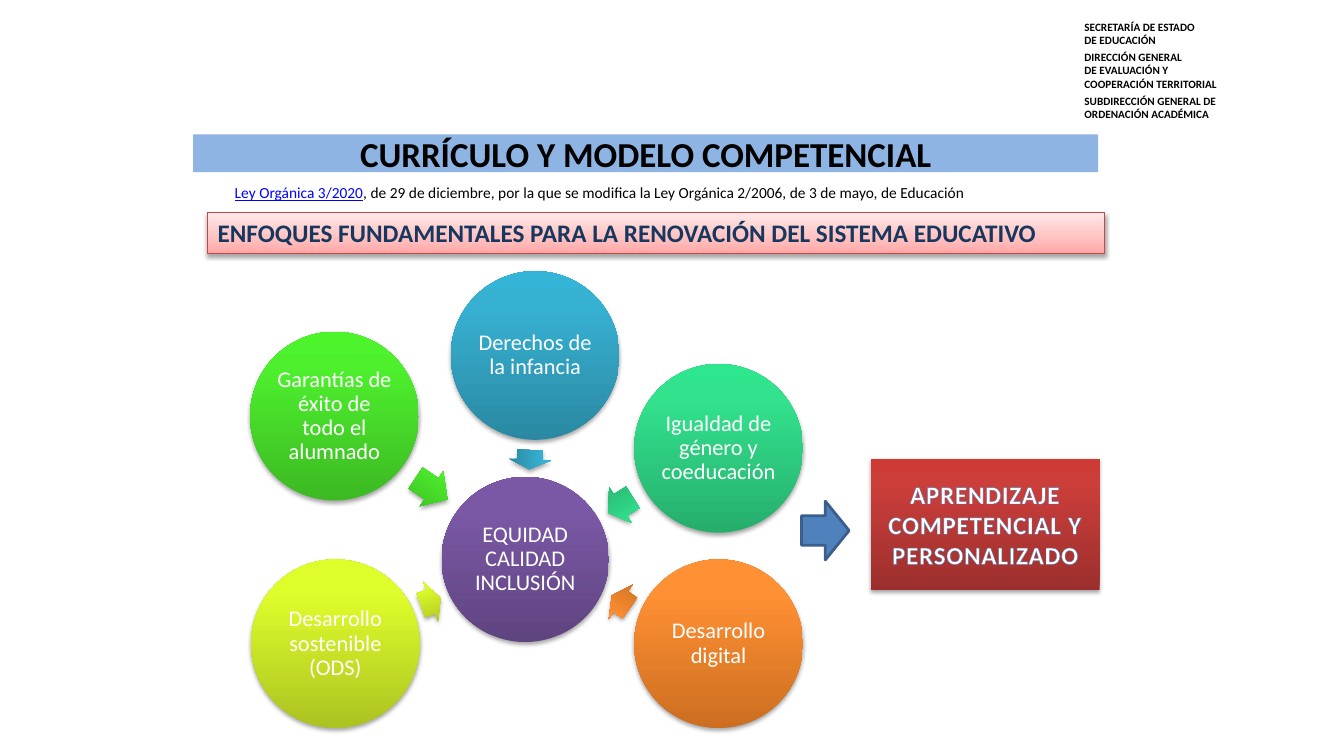
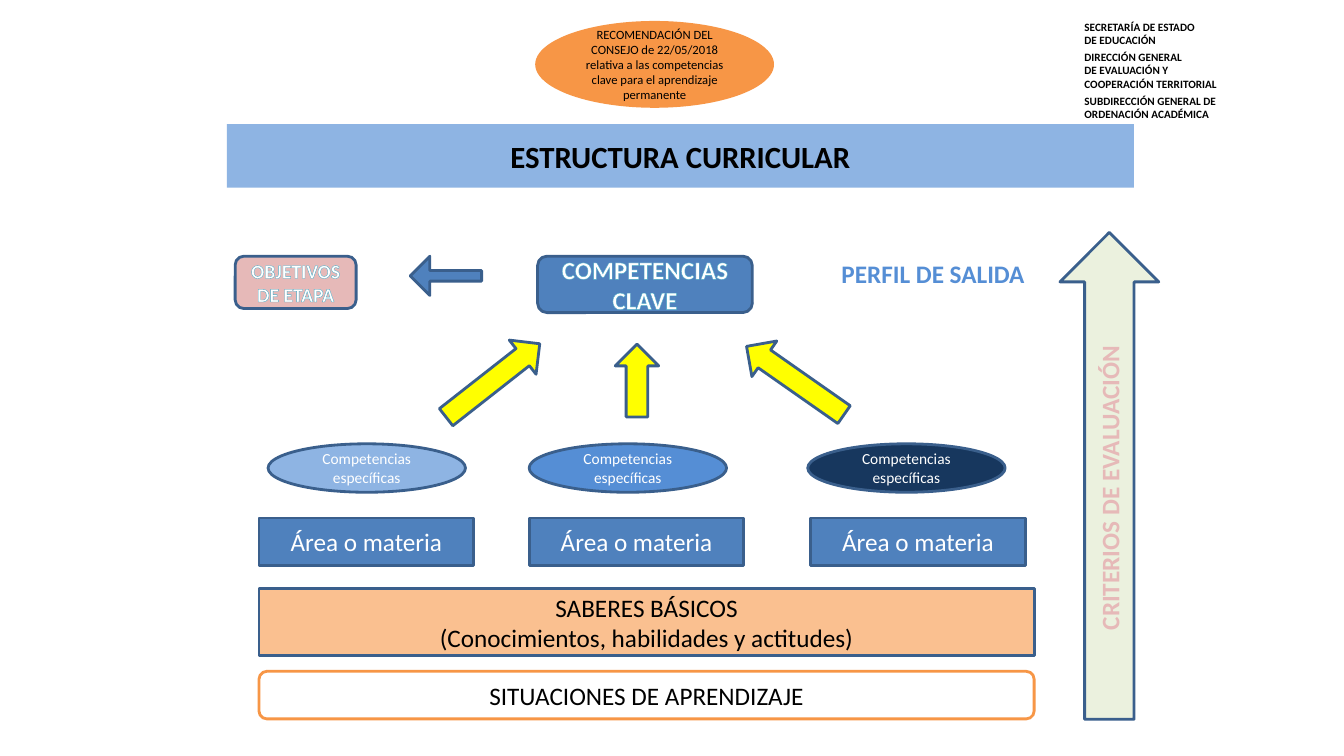
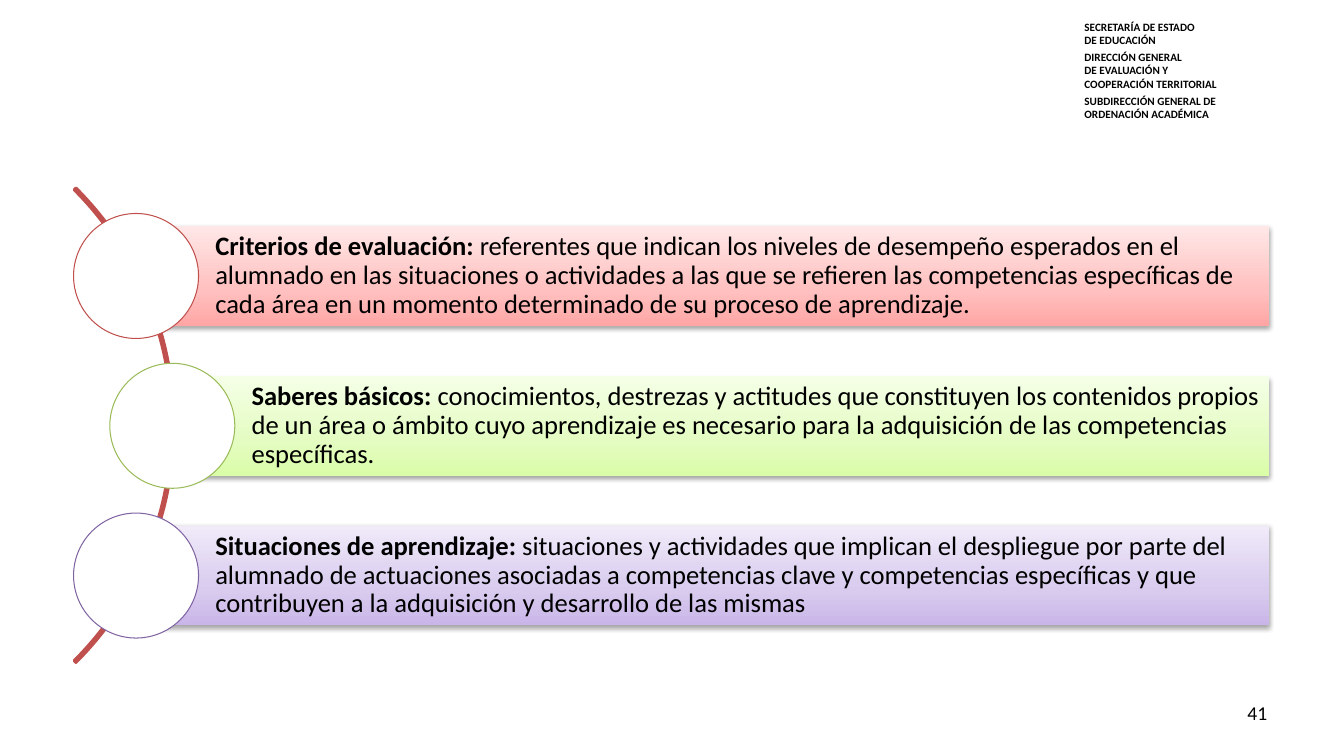
from dataclasses import dataclass
from typing import Optional

from lxml import etree
from pptx import Presentation
from pptx.dml.color import RGBColor
from pptx.enum.dml import MSO_FILL
from pptx.enum.shapes import MSO_SHAPE
from pptx.enum.text import MSO_ANCHOR, MSO_AUTO_SIZE, PP_ALIGN
from pptx.oxml.ns import qn
from pptx.util import Pt

RECT, ROUND = MSO_SHAPE.RECTANGLE, MSO_SHAPE.ROUNDED_RECTANGLE
OVAL, ARROW = MSO_SHAPE.OVAL, MSO_SHAPE.RIGHT_ARROW
BLOCK_ARC = MSO_SHAPE.BLOCK_ARC
LEFT, CENTER = PP_ALIGN.LEFT, PP_ALIGN.CENTER
RIGHT, JUSTIFY = PP_ALIGN.RIGHT, PP_ALIGN.JUSTIFY
TOP, MIDDLE = MSO_ANCHOR.TOP, MSO_ANCHOR.MIDDLE
NO_FIT = MSO_AUTO_SIZE.NONE
GRADIENT = MSO_FILL.GRADIENT

# Colours
FONT = "Calibri"
BLACK = RGBColor(0x00, 0x00, 0x00)
WHITE = RGBColor(0xFF, 0xFF, 0xFF)
LINK = RGBColor(0x00, 0x00, 0xFF)
BAND = RGBColor(0x8E, 0xB4, 0xE3)
BLUE = RGBColor(0x4F, 0x81, 0xBD)
EDGE = RGBColor(0x3A, 0x5F, 0x8C)
MID_BLUE = RGBColor(0x55, 0x8E, 0xD5)
NAVY = RGBColor(0x17, 0x37, 0x5E)
TEAL = RGBColor(0x4B, 0xAC, 0xC6)
PINK = RGBColor(0xE6, 0xB9, 0xB8)
RED = RGBColor(0xC0, 0x50, 0x4D)
DARK_RED = RGBColor(0xBF, 0x4C, 0x48)
GREEN = RGBColor(0x9B, 0xBB, 0x59)
PURPLE = RGBColor(0x80, 0x64, 0xA2)
YELLOW = RGBColor(0xFF, 0xFF, 0x00)
ORANGE = RGBColor(0xF7, 0x96, 0x46)
PEACH = RGBColor(0xFA, 0xC0, 0x90)
PALE_GREEN = RGBColor(0xEB, 0xF1, 0xDE)


@dataclass(frozen=True)
class Gradient:
    """Vertical gradient, listed from the bottom up."""
    bottom: RGBColor
    middle: RGBColor
    top: RGBColor
    stop: int = 80  # place of the middle colour, percent


def strong(bottom: str, middle: str, top: str) -> Gradient:
    return Gradient(*map(RGBColor.from_string, (bottom, middle, top)))


def soft(bottom: str, middle: str, top: str) -> Gradient:
    return Gradient(*map(RGBColor.from_string, (bottom, middle, top)), stop=35)


VIOLET_BALL = strong("5F4480", "7B58A6", "7C57A8")
CYAN_BALL = strong("2A88A2", "37B1D2", "34B4D6")
EMERALD_BALL = strong("26AE6D", "32E28D", "2EE68E")
GREEN_BALL = strong("3CB923", "4EF02E", "4CF52A")
LIME_BALL = strong("ACC321", "DFFD2B", "E1FF2B")
ORANGE_BALL = strong("CC6E20", "FF9034", "FF9136")
RED_BLOCK = strong("9C2F2D", "CB3E3A", "CE3B37")
ROSE_BAR = soft("FFA6A5", "FFC0BF", "FFE7E7")
LIME_BAR = soft("DAFDA7", "E4FCC2", "F5FFE7")
LILAC_BAR = soft("C9B5E8", "D8CBEE", "F0EAF9")


@dataclass(frozen=True)
class Box:
    x: float
    y: float
    w: float
    h: float
    rot: float = 0


@dataclass(frozen=True)
class Style:
    size: float
    color: RGBColor = BLACK
    bold: bool = False
    align: PP_ALIGN = CENTER
    anchor: MSO_ANCHOR = MIDDLE
    margins: tuple = (7.2, 3.6, 7.2, 3.6)
    leading: Optional[float] = None
    outline: Optional[RGBColor] = None
    outline_width: float = 0.8
    tracking: int = 0  # hundredths of a point


@dataclass(frozen=True)
class Ball:
    text: str
    x: float
    y: float
    fill: Gradient
    arrow: Box


@dataclass(frozen=True)
class Column:
    oval_x: float
    area_x: float
    fill: RGBColor
    arrow: Box


@dataclass(frozen=True)
class Definition:
    x: float
    term: str
    text: str
    fill: Gradient
    ring: RGBColor


def place(s, box: Box) -> None:
    s.left, s.top, s.width, s.height = map(Pt, (box.x, box.y, box.w, box.h))
    s.rotation = box.rot


def write(s, paragraphs: list, style: Style):
    """Fill a shape; each paragraph is a list of run texts."""
    tf = s.text_frame
    tf.word_wrap, tf.auto_size = True, NO_FIT
    tf.vertical_anchor = style.anchor
    (tf.margin_left, tf.margin_top,
     tf.margin_right, tf.margin_bottom) = map(Pt, style.margins)
    for i, texts in enumerate(paragraphs):
        p = tf.paragraphs[0] if i == 0 else tf.add_paragraph()
        p.alignment = style.align
        if style.leading:
            p.line_spacing = style.leading
        p.font.name, p.font.size = FONT, Pt(style.size)
        p.font.bold, p.font.color.rgb = style.bold, style.color
        for text in texts:
            p.add_run().text = text
    if style.outline is not None:
        for r in s.element.iter(qn("a:r")):
            rPr = r.get_or_add_rPr()
            rPr.set("spc", str(style.tracking))
            ln = etree.Element(qn("a:ln"), w=str(Pt(style.outline_width)))
            fill = etree.SubElement(ln, qn("a:solidFill"))
            etree.SubElement(fill, qn("a:srgbClr"), val=str(style.outline))
            rPr.insert(0, ln)
    return tf


def paint_gradient(s, gradient: Gradient) -> None:
    s.fill.gradient()
    s.fill.gradient_angle = 90
    stops = next(s.element.iter(qn("a:gsLst")))
    for old in list(stops):
        stops.remove(old)
    for pos, color in ((0, gradient.bottom), (gradient.stop, gradient.middle),
                       (100, gradient.top)):
        gs = etree.SubElement(stops, qn("a:gs"), pos=str(pos * 1000))
        etree.SubElement(gs, qn("a:srgbClr"), val=str(color))


def drop_shadow(s) -> None:
    effects = next(s.element.iter(qn("a:effectLst")))
    shadow = etree.SubElement(effects, qn("a:outerShdw"), blurRad=str(Pt(3.1)),
                              dist=str(Pt(1.8)), dir="5400000", rotWithShape="0")
    color = etree.SubElement(shadow, qn("a:srgbClr"), val=str(BLACK))
    etree.SubElement(color, qn("a:alpha"), val="35000")


def add_shape(slide, kind, box: Box, fill=None, line: Optional[RGBColor] = None,
              width: float = 2):
    """Draw a preset shape; gradient shapes carry a soft shadow."""
    s = slide.shapes.add_shape(kind, 0, 0, 0, 0)
    place(s, box)
    s.shadow.inherit = False
    if isinstance(fill, Gradient):
        paint_gradient(s, fill)
        drop_shadow(s)
    elif fill is None:
        s.fill.background()
    else:
        s.fill.solid()
        s.fill.fore_color.rgb = fill
    if line is None:
        s.line.fill.background()
    else:
        s.line.color.rgb, s.line.width = line, Pt(width)
    return s


def add_text(slide, box: Box, paragraphs: list, style: Style):
    s = slide.shapes.add_textbox(0, 0, 0, 0)
    place(s, box)
    write(s, paragraphs, style)
    return s


def add_title(slide, text: str, box: Box, size: float) -> None:
    s = slide.shapes.title
    place(s, box)
    s.fill.solid()
    s.fill.fore_color.rgb = BAND
    write(s, [[text]], Style(size, bold=True))


def add_master_header(prs, slide) -> None:
    """Put the department names on the master, for every slide."""
    lines = ["SECRETARÍA DE ESTADO", "DE EDUCACIÓN", "DIRECCIÓN GENERAL",
             "DE EVALUACIÓN Y", "COOPERACIÓN TERRITORIAL",
             "SUBDIRECCIÓN GENERAL DE ORDENACIÓN ACADÉMICA"]
    s = add_text(slide, Box(767.5, 10.8, 147, 80), [[line] for line in lines],
                 Style(8, bold=True, align=LEFT, anchor=TOP))
    for i in (2, 5):
        s.text_frame.paragraphs[i].space_before = Pt(2.4)
    prs.slide_master.shapes.element.append(s.element)


def build_approaches(slide) -> None:
    add_title(slide, "CURRÍCULO Y MODELO COMPETENCIAL",
              Box(138, 96, 646.5, 27), 25)
    law = add_text(
        slide, Box(154, 127.5, 628, 26.5),
        [["Ley Orgánica 3/2020", ", de 29 de diciembre, por la que se modifica "
          "la Ley Orgánica 2/2006, de 3 de mayo, de Educación"]],
        Style(11, align=JUSTIFY, anchor=TOP, margins=(13.7, 3.6, 7.2, 3.6)))
    name = law.text_frame.paragraphs[0].runs[0].font
    name.color.rgb, name.underline = LINK, True

    # Central idea and the balls that point to it
    ball_style = Style(16, WHITE, leading=0.9, margins=(1.5,) * 4)
    core = add_shape(slide, OVAL, Box(315.4, 340.6, 119.5, 118), VIOLET_BALL)
    write(core, [["EQUIDAD CALIDAD INCLUSIÓN"]], ball_style)
    size, arrow_h = 120.5, 30.2
    balls = [
        Ball("Derechos de la infancia", 322, 193.7, CYAN_BALL,
             Box(371.5, 313.2, 13.7, arrow_h, 92.6)),
        Ball("Igualdad de género y coeducación", 453, 260, EMERALD_BALL,
             Box(432.7, 345.6, 20.9, arrow_h, 147.9)),
        Ball("Garantías de éxito de todo el alumnado", 178.6, 237, GREEN_BALL,
             Box(294.5, 334, 27.4, arrow_h, 33.9)),
        Ball("Desarrollo sostenible (ODS)", 179.3, 399.6, LIME_BALL,
             Box(300.2, 414.7, 15, arrow_h, 339.9)),
        Ball("Desarrollo digital", 453, 399.6, ORANGE_BALL,
             Box(435.6, 414.7, 15.8, arrow_h, 214.9)),
    ]
    for ball in balls:
        arrow = add_shape(slide, ARROW, ball.arrow, ball.fill)
        arrow.adjustments[0] = 0.6
        s = add_shape(slide, OVAL, Box(ball.x, ball.y, size, size), ball.fill)
        write(s, [[ball.text]], ball_style)

    # Heading bar and outcome
    add_shape(slide, ARROW, Box(572.5, 358, 34, 42), BLUE, EDGE)
    bar = add_shape(slide, RECT, Box(148.3, 152, 641, 29), ROSE_BAR, DARK_RED, 0.75)
    write(bar, [["ENFOQUES FUNDAMENTALES PARA LA RENOVACIÓN DEL SISTEMA EDUCATIVO"]],
          Style(18, NAVY, True, LEFT, TOP))
    outcome = add_shape(slide, RECT, Box(622, 327.6, 163.5, 93.6), RED_BLOCK)
    write(outcome, [["APRENDIZAJE COMPETENCIAL Y PERSONALIZADO"]],
          Style(18, WHITE, True, outline=BLUE, outline_width=0.75, tracking=50))


def build_structure(slide) -> None:
    add_title(slide, "ESTRUCTURA CURRICULAR", Box(162, 88.6, 648, 45.4), 22)
    source = add_shape(slide, OVAL, Box(382.3, 15, 170.6, 62), ORANGE)
    write(source, [["RECOMENDACIÓN DEL CONSEJO de 22/05/2018 relativa a las "
                    "competencias clave para el aprendizaje permanente"]],
          Style(9, margins=(5, 2.9, 5, 2.9)))

    # Goals, key competences and leaving profile
    goals = add_shape(slide, ROUND, Box(168, 183, 86.4, 37.4), PINK, EDGE)
    write(goals, [["OBJETIVOS DE ETAPA"]], Style(14, WHITE, True, outline=TEAL))
    key = add_shape(slide, ROUND, Box(384, 183, 153.4, 40.3), BLUE, EDGE)
    write(key, [["COMPETENCIAS CLAVE"]], Style(18, WHITE, True, outline=TEAL))
    to_goals = add_shape(slide, ARROW, Box(293, 183, 51, 28, 180), BLUE, EDGE)
    to_goals.adjustments[0] = 0.27
    add_text(slide, Box(594, 180.7, 147, 29), [["PERFIL DE SALIDA"]],
             Style(18, MID_BLUE, True, LEFT, TOP))

    # Specific competences over their subject areas
    columns = [
        Column(191.5, 185, BAND, Box(309.6, 256.3, 85, 31, 321.9)),
        Column(378, 378, MID_BLUE, Box(429, 256.3, 52, 31, 270)),
        Column(577, 579, NAVY, Box(525.6, 256.3, 85, 31, 215)),
    ]
    for col in columns:
        add_shape(slide, ARROW, col.arrow, YELLOW, EDGE)
        oval = add_shape(slide, OVAL, Box(col.oval_x, 317, 141, 34.6), col.fill, EDGE)
        write(oval, [["Competencias específicas"]], Style(11, WHITE))
        area = add_shape(slide, RECT, Box(col.area_x, 370, 153.4, 34), BLUE, EDGE)
        write(area, [["Área o materia"]], Style(18, WHITE))

    # Foundations and assessment
    basics = add_shape(slide, RECT, Box(185, 420.5, 553.7, 48), PEACH, EDGE)
    write(basics, [["SABERES BÁSICOS"], ["(Conocimientos, habilidades y actitudes)"]],
          Style(18))
    situations = add_shape(slide, ROUND, Box(185, 479.5, 553.7, 34), WHITE, ORANGE)
    write(situations, [["SITUACIONES DE APRENDIZAJE"]], Style(18))
    criteria = add_shape(slide, ARROW, Box(618.5, 304.6, 347.8, 70.6, 270),
                         PALE_GREEN, EDGE)
    write(criteria, [["CRITERIOS DE EVALUACIÓN"]],
          Style(18, PINK, True, outline=RED, outline_width=1.75))


def build_definitions(slide) -> None:
    arc = add_shape(slide, BLOCK_ARC, Box(-355, 64, 479.5, 479.5), line=RED)
    for i, value in enumerate((189, 27, 0.004)):
        arc.adjustments[i] = value

    right, top, pitch, bar_h, ring_d = 906.5, 161.5, 107, 71.3, 89.3
    outer, inner = 97.2, 123.1
    definitions = [
        Definition(outer, "Criterios de evaluación: ",
                   "referentes que indican los niveles de desempeño esperados en el "
                   "alumnado en las situaciones o actividades a las que se refieren "
                   "las competencias específicas de cada área en un momento "
                   "determinado de su proceso de aprendizaje.", ROSE_BAR, RED),
        Definition(inner, "Saberes básicos: ",
                   "conocimientos, destrezas y actitudes que constituyen los "
                   "contenidos propios de un área o ámbito cuyo aprendizaje es "
                   "necesario para la adquisición de las competencias específicas.",
                   LIME_BAR, GREEN),
        Definition(outer, "Situaciones de aprendizaje: ",
                   "situaciones y actividades que implican el despliegue por parte "
                   "del alumnado de actuaciones asociadas a competencias clave y "
                   "competencias específicas y que contribuyen a la adquisición y "
                   "desarrollo de las mismas", LILAC_BAR, PURPLE),
    ]
    style = Style(19, align=LEFT, leading=0.9, margins=(56.6, 3.6, 3.6, 3.6))
    for i, d in enumerate(definitions):
        y = top + i * pitch
        bar = add_shape(slide, RECT, Box(d.x, y, right - d.x, bar_h), d.fill)
        tf = write(bar, [[d.term, d.text]], style)
        tf.paragraphs[0].runs[0].font.bold = True
        add_shape(slide, OVAL, Box(d.x - ring_d / 2, y + (bar_h - ring_d) / 2,
                                   ring_d, ring_d), WHITE, d.ring, 0.75)

    add_text(slide, Box(688.3, 497, 224, 29), [["41"]],
             Style(14, align=RIGHT, anchor=TOP))


def main() -> None:
    prs = Presentation()
    prs.slide_width, prs.slide_height = Pt(960), Pt(540)
    title_only, blank = prs.slide_layouts[5], prs.slide_layouts[6]
    pages = [(title_only, build_approaches), (title_only, build_structure),
             (blank, build_definitions)]
    for i, (layout, build) in enumerate(pages):
        slide = prs.slides.add_slide(layout)
        if i == 0:
            add_master_header(prs, slide)
        build(slide)
    prs.save("out.pptx")


if __name__ == "__main__":
    main()
